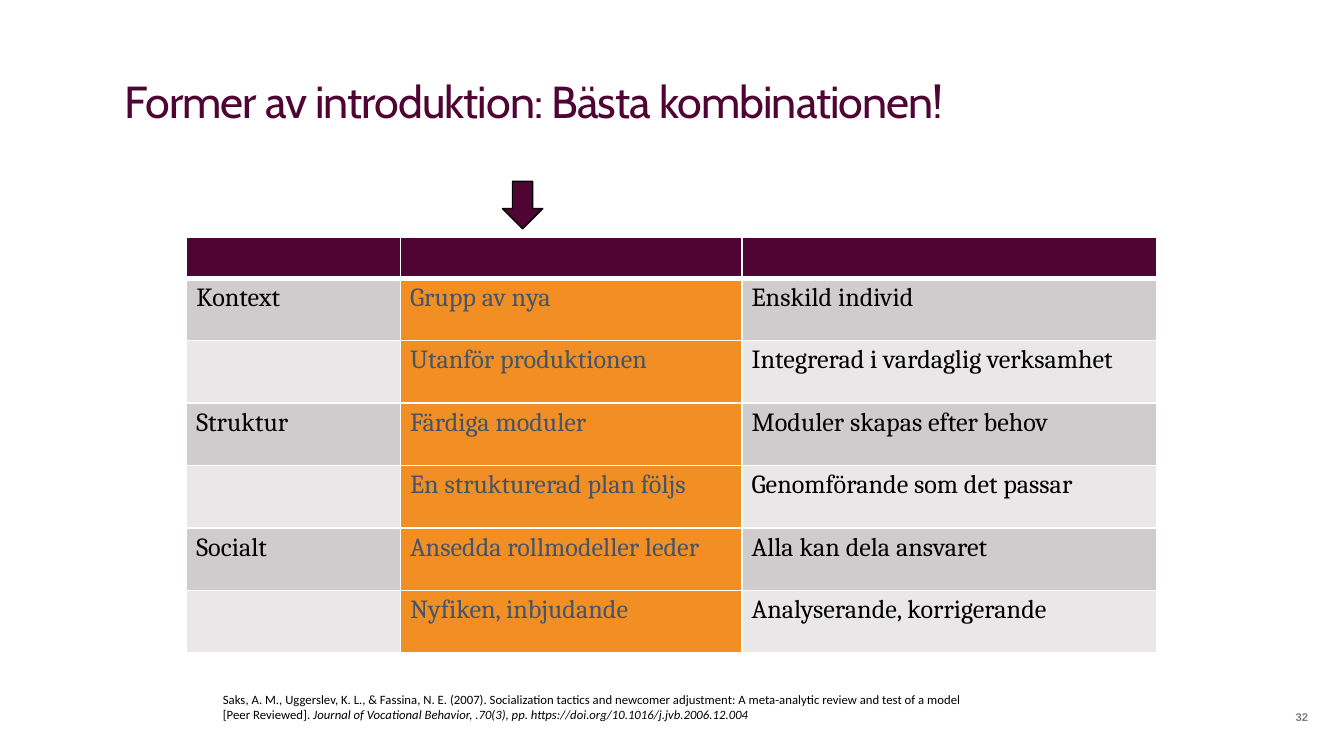
from dataclasses import dataclass

from lxml import etree
from pptx import Presentation
from pptx.dml.color import RGBColor
from pptx.enum.shapes import MSO_SHAPE
from pptx.enum.text import MSO_ANCHOR, PP_ALIGN
from pptx.oxml.ns import qn
from pptx.util import Pt

DOWN = MSO_SHAPE.DOWN_ARROW
TOP, MIDDLE = MSO_ANCHOR.TOP, MSO_ANCHOR.MIDDLE
LEFT, RIGHT = PP_ALIGN.LEFT, PP_ALIGN.RIGHT


@dataclass(frozen=True)
class Theme:
    """Colours, fonts and type sizes of the slide."""
    plum: str = "4F0433"
    orange: str = "F18F24"
    slate: str = "44546A"
    dark: str = "D0CCCE"
    light: str = "E9E7E8"
    grey: str = "808080"
    black: str = "000000"
    white: str = "FFFFFF"
    head: str = "Cabin"
    body: str = "Cambria"
    note: str = "Calibri"
    page: str = "Arial"
    title: float = 24
    cell: float = 14
    small: float = 6.8
    tiny: float = 6


class Deck:
    """Holds the theme and the current slide."""

    def __init__(self, theme, wide, high):
        """Open a deck with one blank slide."""
        self.theme = theme
        self.file = Presentation()
        self.file.slide_width, self.file.slide_height = Pt(wide), Pt(high)
        self.slide = self.file.slides.add_slide(self.file.slide_layouts[6])

    def style(self, para, face, size, color, bold=False):
        """Set the font of a paragraph."""
        font = para.font
        font.name, font.size, font.bold = face, Pt(size), bold
        font.color.rgb = RGBColor.from_string(color)

    def text(self, box, runs, face, size, color, bold=False, align=LEFT,
             anchor=TOP, space=0):
        """Add a text box from pairs of words and italic flag."""
        frame = self.slide.shapes.add_textbox(*map(Pt, box)).text_frame
        frame.word_wrap, frame.vertical_anchor = True, anchor
        para = frame.paragraphs[0]
        para.alignment = align
        self.style(para, face, size, color, bold)
        for words, slant in runs:
            run = para.add_run()
            run.text = words
            if slant:
                run.font.italic = True
            if space:
                run.font._element.set("spc", str(int(space * 100)))

    def arrow(self, box, fill, line):
        """Add a block arrow that points down."""
        shape = self.slide.shapes.add_shape(DOWN, *map(Pt, box))
        shape.shadow.inherit = False
        shape.fill.solid()
        shape.fill.fore_color.rgb = RGBColor.from_string(fill)
        shape.line.color.rgb = RGBColor.from_string(line)
        shape.line.width = Pt(0.75)

    def edge(self, cell, side, width):
        """Draw one white border of a cell."""
        line = etree.SubElement(cell._tc.get_or_add_tcPr(), qn(f"a:ln{side}"),
                                w=str(Pt(width)))
        fill = etree.SubElement(line, qn("a:solidFill"))
        etree.SubElement(fill, qn("a:srgbClr"), val=self.theme.white)

    def cell(self, cell, words, fill, color, base):
        """Fill one table cell with words, colour and borders."""
        cell.margin_left = cell.margin_right = Pt(5.2)
        cell.margin_top = cell.margin_bottom = Pt(2.6)
        for side in "LRT":
            self.edge(cell, side, 1)
        self.edge(cell, "B", base)
        cell.fill.solid()
        cell.fill.fore_color.rgb = RGBColor.from_string(fill)
        cell.text = words
        para = cell.text_frame.paragraphs[0]
        self.style(para, self.theme.body, self.theme.cell, color)
        if not words:
            etree.SubElement(para._p, qn("a:endParaRPr"),
                             sz=str(self.theme.cell * 100))

    def table(self, left, top, cols, first, high, rows):
        """Add a table with a plum head and an orange middle column."""
        look = self.theme
        size = first + high * (len(rows) - 1)
        box = map(Pt, (left, top, sum(cols), size))
        grid = self.slide.shapes.add_table(len(rows), len(cols), *box).table
        grid.horz_banding = False
        for col, width in zip(grid.columns, cols):
            col.width = Pt(width)
        for i, row in enumerate(rows):
            grid.rows[i].height = Pt(high if i else first)
            for j, words in enumerate(row):
                fill = look.dark if i % 2 else look.light
                color, base = look.black, 1
                if i == 0:
                    fill, base = look.plum, 3
                elif j == 1:
                    fill, color = look.orange, look.slate
                self.cell(grid.cell(i, j), words, fill, color, base)


ROWS = [
    ("", "", ""),
    ("Kontext", "Grupp av nya", "Enskild individ"),
    ("", "Utanför produktionen", "Integrerad i vardaglig verksamhet"),
    ("Struktur", "Färdiga moduler", "Moduler skapas efter behov"),
    ("", "En strukturerad plan följs", "Genomförande som det passar"),
    ("Socialt", "Ansedda rollmodeller leder", "Alla kan dela ansvaret"),
    ("", "Nyfiken, inbjudande", "Analyserande, korrigerande"),
]
SOURCE = [
    ("Saks, A. M., Uggerslev, K. L., & Fassina, N. E. (2007). Socialization "
     "tactics and newcomer adjustment: A meta-analytic review and test of a "
     "model [Peer Reviewed]. ", False),
    ("Journal of Vocational Behavior, .70(3), pp. "
     "https://doi.org/10.1016/j.jvb.2006.12.004", True),
]


def main():
    """Build the slide and save it."""
    look = Theme()
    deck = Deck(look, 720, 405)
    deck.table(100, 127, (114.5, 183, 222.5), 22, 33.5, ROWS)
    deck.text((653.8, 377.3, 54, 13.7), [("32", False)], look.page, look.tiny,
              look.grey, bold=True, align=RIGHT, anchor=MIDDLE)
    deck.arrow((269.2, 97.2, 21.6, 25.4), look.plum, look.black)
    deck.text((112.3, 367.2, 425.5, 23.8), SOURCE, look.note, look.small,
              look.black)
    deck.text((59.8, 36, 612, 67.7),
              [("Former av introduktion: Bästa kombinationen!", False)],
              look.head, look.title, look.plum, space=-0.5)
    deck.file.save("out.pptx")


if __name__ == "__main__":
    main()
